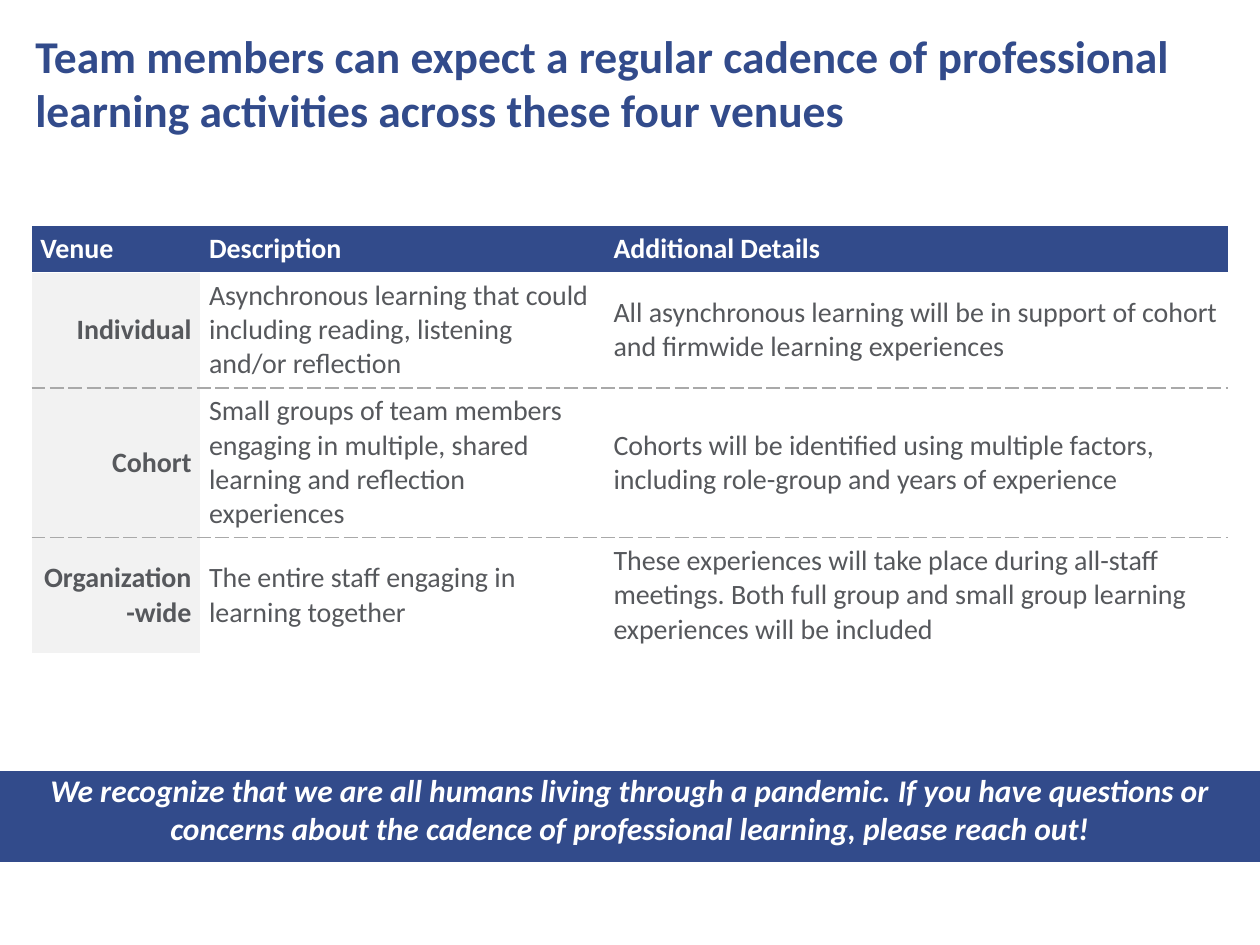
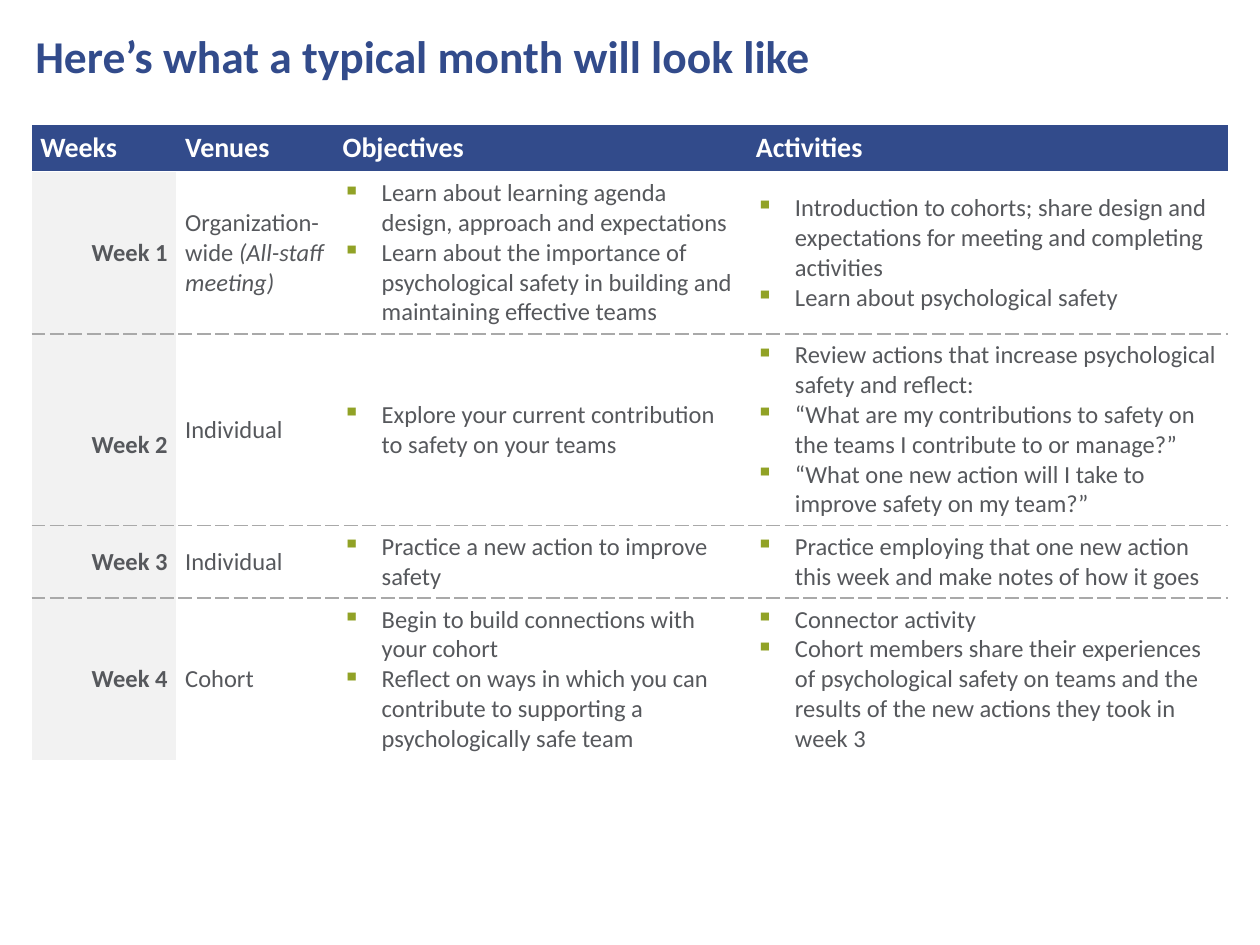
from dataclasses import dataclass

from lxml.etree import SubElement
from pptx import Presentation
from pptx.dml.color import RGBColor
from pptx.enum.shapes import MSO_SHAPE
from pptx.enum.text import MSO_ANCHOR, MSO_AUTO_SIZE, PP_ALIGN
from pptx.oxml.ns import qn
from pptx.util import Inches, Pt


@dataclass(frozen=True)
class Theme:
    font: str = "Calibri"
    navy: str = "324B8B"
    white: str = "FFFFFF"
    text: str = "56585C"
    label_fill: str = "F2F2F2"
    rule: str = "A9A9A9"
    bullet: str = "91A226"
    title_size: int = 26
    band_size: int = 18
    header_size: int = 16
    rule_width: int = 1


THEME = Theme()
TITLE_BOX = (0.28, 0.22, 9.43, 0.58)
BAND_BOX = (0, 6.12, 10, 0.72)
TABLE_LEFT = 0.25
HEADER_HEIGHT = 0.37
CELL_MARGIN_X, CELL_MARGIN_Y = 0.07, 0.05
BULLET_INDENT = 0.31
WEEK_2_DROP = 0.24

VENUE_HEADINGS = ["Venue", "Description", "Additional Details"]
VENUES = [
    ["Individual",
     "Asynchronous learning that could including reading, listening and/or reflection",
     "All asynchronous learning will be in support of cohort and firmwide learning experiences"],
    ["Cohort",
     "Small groups of team members engaging in multiple, shared learning and reflection experiences",
     "Cohorts will be identified using multiple factors, including role-group and years of experience"],
    ["Organization-wide",
     "The entire staff engaging in learning together",
     "These experiences will take place during all-staff meetings. Both full group and small group "
     "learning experiences will be included"],
]

# A list in a cell is bulleted; a tuple is plain text followed by an italic part.
WEEK_HEADINGS = ["Weeks", "Venues", "Objectives", "Activities"]
WEEKS = [
    ["Week 1", ("Organization-wide ", "(All-staff meeting)"),
     ["Learn about learning agenda design, approach and expectations",
      "Learn about the importance of psychological safety in building and maintaining effective teams"],
     ["Introduction to cohorts; share design and expectations for meeting and completing activities",
      "Learn about psychological safety"]],
    ["Week 2", "Individual",
     ["Explore your current contribution to safety on your teams"],
     ["Review actions that increase psychological safety and reflect:",
      "“What are my contributions to safety on the teams I contribute to or manage?”",
      "“What one new action will I take to improve safety on my team?”"]],
    ["Week 3", "Individual",
     ["Practice a new action to improve safety"],
     ["Practice employing that one new action this week and make notes of how it goes"]],
    ["Week 4", "Cohort",
     ["Begin to build connections with your cohort",
      "Reflect on ways in which you can contribute to supporting a psychologically safe team"],
     ["Connector activity",
      "Cohort members share their experiences of psychological safety on teams and the results of "
      "the new actions they took in week 3"]],
]


def rgb(color):
    return RGBColor.from_string(color)


def add_bullet(paragraph):
    properties = paragraph._p.get_or_add_pPr()
    properties.set("marL", str(Inches(BULLET_INDENT)))
    properties.set("indent", str(-Inches(BULLET_INDENT)))
    bullet_color = SubElement(properties, qn("a:buClr"))
    SubElement(bullet_color, qn("a:srgbClr"), val=THEME.bullet)
    SubElement(properties, qn("a:buChar"), char="▪")


def write(frame, content, *, size, color, bold=False, italic=False, align=PP_ALIGN.LEFT):
    bulleted = isinstance(content, list)
    for index, line in enumerate(content if bulleted else [content]):
        paragraph = frame.add_paragraph() if index else frame.paragraphs[0]
        if bulleted:
            add_bullet(paragraph)
        paragraph.alignment = align
        parts = line if isinstance(line, tuple) else (line,)
        for part_index, part in enumerate(parts):
            run = paragraph.add_run()
            run.text = part
            run.font.name = THEME.font
            run.font.size = Pt(size)
            run.font.bold = bold
            run.font.italic = italic or part_index > 0
            run.font.color.rgb = rgb(color)


def clear_margins(frame):
    frame.margin_left = frame.margin_right = frame.margin_top = frame.margin_bottom = 0
    frame.word_wrap = True
    frame.vertical_anchor = MSO_ANCHOR.TOP


def add_titled_slide(deck, title):
    slide = deck.slides.add_slide(deck.slide_layouts[5])
    heading = slide.shapes.title
    heading.left, heading.top, heading.width, heading.height = map(Inches, TITLE_BOX)
    clear_margins(heading.text_frame)
    heading.text_frame.auto_size = MSO_AUTO_SIZE.NONE
    write(heading.text_frame, title, size=THEME.title_size, color=THEME.navy, bold=True)
    return slide


def add_band(slide, box, message):
    band = slide.shapes.add_shape(MSO_SHAPE.RECTANGLE, *map(Inches, box))
    band.shadow.inherit = False
    band.fill.solid()
    band.fill.fore_color.rgb = rgb(THEME.navy)
    band.line.fill.background()
    clear_margins(band.text_frame)
    write(band.text_frame, message, size=THEME.band_size, color=THEME.white,
          bold=True, italic=True, align=PP_ALIGN.CENTER)


def set_borders(cell, top, bottom):
    """Draw the given (colour, dash) edges; None leaves an edge bare."""
    properties = cell._tc.get_or_add_tcPr()
    for edge, style in (("lnL", None), ("lnR", None), ("lnT", top), ("lnB", bottom)):
        line = SubElement(properties, qn(f"a:{edge}"), w=str(Pt(THEME.rule_width)))
        if style is None:
            SubElement(line, qn("a:noFill"))
            continue
        color, dash = style
        fill = SubElement(line, qn("a:solidFill"))
        SubElement(fill, qn("a:srgbClr"), val=color)
        SubElement(line, qn("a:prstDash"), val=dash)


def format_cell(cell, fill, anchor):
    cell.margin_left = cell.margin_right = Inches(CELL_MARGIN_X)
    cell.margin_top = cell.margin_bottom = Inches(CELL_MARGIN_Y)
    cell.vertical_anchor = anchor
    if fill:
        cell.fill.solid()
        cell.fill.fore_color.rgb = rgb(fill)
    else:
        cell.fill.background()


def add_schedule(slide, top, headings, entries, widths, heights, *, size,
                 header_anchor=MSO_ANCHOR.MIDDLE, last_rule=None):
    heights = [HEADER_HEIGHT, *heights]
    box = (TABLE_LEFT, top, sum(widths), sum(heights))
    table = slide.shapes.add_table(len(heights), len(widths), *map(Inches, box)).table
    table.first_row = table.horz_banding = False
    for column, width in zip(table.columns, widths):
        column.width = Inches(width)
    for row, height in zip(table.rows, heights):
        row.height = Inches(height)

    dashed = (THEME.rule, "dash")
    rules = [None, (THEME.white, "solid"), *[dashed] * (len(entries) - 1), last_rule]
    for row, contents in enumerate([headings, *entries]):
        for column, content in enumerate(contents):
            cell = table.cell(row, column)
            set_borders(cell, rules[row], rules[row + 1])
            is_header, is_label = row == 0, column == 0
            if is_header:
                format_cell(cell, THEME.navy, header_anchor)
                write(cell.text_frame, content, size=THEME.header_size,
                      color=THEME.white, bold=True)
            else:
                format_cell(cell, THEME.label_fill if is_label else None, MSO_ANCHOR.MIDDLE)
                write(cell.text_frame, content, size=size, color=THEME.text, bold=is_label,
                      align=PP_ALIGN.RIGHT if is_label else PP_ALIGN.LEFT)
    return table


def build_venues_slide(deck):
    slide = add_titled_slide(deck, "Team members can expect a regular cadence of professional "
                                   "learning activities across these four venues")
    add_schedule(slide, 1.79, VENUE_HEADINGS, VENUES, [1.34, 3.21, 4.95],
                 [0.91, 1.19, 0.91], size=16, header_anchor=MSO_ANCHOR.TOP)
    add_band(slide, BAND_BOX,
             "We recognize that we are all humans living through a pandemic. If you have questions "
             "or concerns about the cadence of professional learning, please reach out!")


def build_month_slide(deck):
    slide = add_titled_slide(deck, "Here’s what a typical month will look like")
    table = add_schedule(slide, 0.99, WEEK_HEADINGS, WEEKS, [1.15, 1.25, 3.28, 3.82],
                         [1.29, 1.52, 0.57, 1.29], size=14)
    table.cell(2, 0).margin_top = Inches(CELL_MARGIN_Y + WEEK_2_DROP)


def main():
    deck = Presentation()
    deck.slide_width, deck.slide_height = Inches(10), Inches(7.5)
    build_venues_slide(deck)
    build_month_slide(deck)
    deck.save("out.pptx")


if __name__ == "__main__":
    main()
